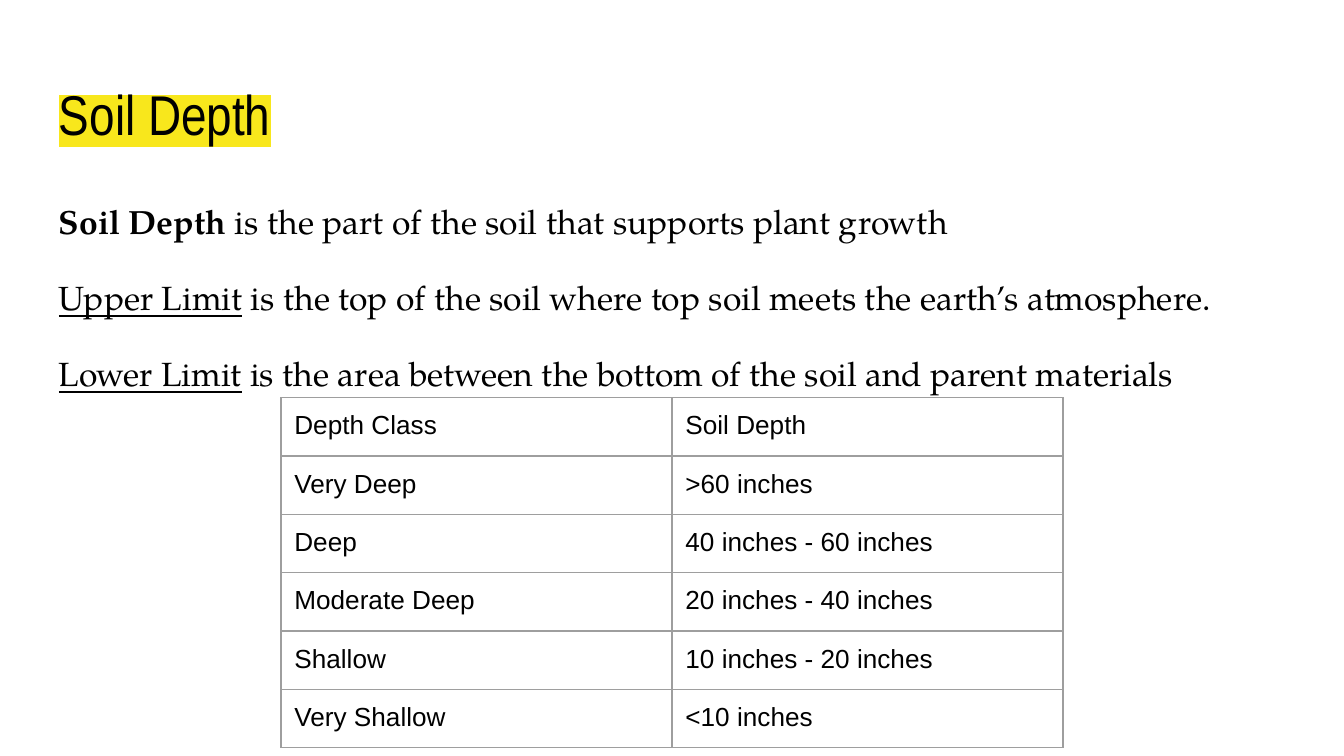
from lxml.etree import SubElement
from pptx import Presentation
from pptx.dml.color import RGBColor
from pptx.oxml import parse_xml
from pptx.oxml.ns import nsdecls, qn
from pptx.util import Inches, Pt

COLORS = {"text": "000000", "highlight": "F8E71C", "border": "9E9E9E"}
MARGIN = Inches(0.1)
TITLE = "Soil Depth"
DEFINITIONS = [
    ("Soil Depth", " is the part of the soil that supports plant growth", {"bold": True}),
    ("Upper Limit", " is the top of the soil where top soil meets the earth’s atmosphere.", {"underline": True}),
    ("Lower Limit", " is the area between the bottom of the soil and parent materials", {"underline": True}),
]
DEPTH_CLASSES = [
    ("Depth Class", "Soil Depth"),
    ("Very Deep", ">60 inches"),
    ("Deep", "40 inches - 60 inches"),
    ("Moderate Deep", "20 inches - 40 inches"),
    ("Shallow", "10 inches - 20 inches"),
    ("Very Shallow", "<10 inches"),
]


class SlideBuilder:
    styles = {
        "title": {"name": "Arial Narrow", "size": Pt(30)},
        "body": {"name": "TeX Gyre Pagella", "size": Pt(18)},
        "table": {"name": "Arial", "size": Pt(14)},
    }

    def __init__(self, slide):
        self.slide = slide

    def run(self, paragraph, text, style, **extra):
        run = paragraph.add_run()
        run.text = text
        for name, value in {**self.styles[style], **extra}.items():
            setattr(run.font, name, value)
        run.font.color.rgb = RGBColor.from_string(COLORS["text"])
        return run

    def margins(self, target):
        for side in ("left", "top", "right", "bottom"):
            setattr(target, f"margin_{side}", MARGIN)

    def text_frame(self, left, top, width, height):
        box = self.slide.shapes.add_textbox(Inches(left), Inches(top), Inches(width), Inches(height))
        frame = box.text_frame
        frame.word_wrap = True
        self.margins(frame)
        return frame

    def title(self, text, left, top, width, height):
        frame = self.text_frame(left, top, width, height)
        run = self.run(frame.paragraphs[0], text, "title")
        highlight = parse_xml(
            f'<a:highlight {nsdecls("a")}><a:srgbClr val="{COLORS["highlight"]}"/></a:highlight>'
        )
        run.font._element.find(qn("a:solidFill")).addnext(highlight)

    def definitions(self, entries, left, top, width, height):
        frame = self.text_frame(left, top, width, height)
        for index, (term, meaning, emphasis) in enumerate(entries):
            paragraph = frame.add_paragraph() if index else frame.paragraphs[0]
            paragraph.line_spacing = 1.15
            paragraph.space_before = Pt(16 if index else 0)
            self.run(paragraph, term, "body", **emphasis)
            self.run(paragraph, meaning, "body")
        paragraph.space_after = Pt(16)

    def borders(self, cell):
        properties = cell._tc.get_or_add_tcPr()
        for position, side in enumerate(("lnL", "lnR", "lnT", "lnB")):
            line = parse_xml(
                f'<a:{side} {nsdecls("a")} w="{Pt(0.75)}"><a:solidFill/></a:{side}>'
            )
            SubElement(line[0], qn("a:srgbClr"), val=COLORS["border"])
            properties.insert(position, line)

    def table(self, rows, left, top, size, column_width, row_height):
        table = self.slide.shapes.add_table(
            len(rows), len(rows[0]), Inches(left), Inches(top), Inches(size), Inches(size)
        ).table
        for name in ("first_row", "horz_banding"):
            setattr(table, name, False)
        for column in table.columns:
            column.width = Inches(column_width)
        for row, values in zip(table.rows, rows):
            row.height = Inches(row_height)
            for cell, value in zip(row.cells, values):
                self.margins(cell)
                cell.fill.background()
                self.borders(cell)
                self.run(cell.text_frame.paragraphs[0], value, "table")


def main():
    presentation = Presentation()
    presentation.slide_width = Inches(10)
    presentation.slide_height = presentation.slide_width * 9 // 16
    slide = presentation.slides.add_slide(presentation.slide_layouts[6])
    builder = SlideBuilder(slide)
    builder.title(TITLE, 0.34, 0.49, 9.32, 0.63)
    builder.definitions(DEFINITIONS, 0.34, 1.35, 9.32, 3.65)
    builder.table(DEPTH_CLASSES, 2.09, 2.96, 3.28, 2.91, 0.39)
    presentation.save("out.pptx")


if __name__ == "__main__":
    main()
